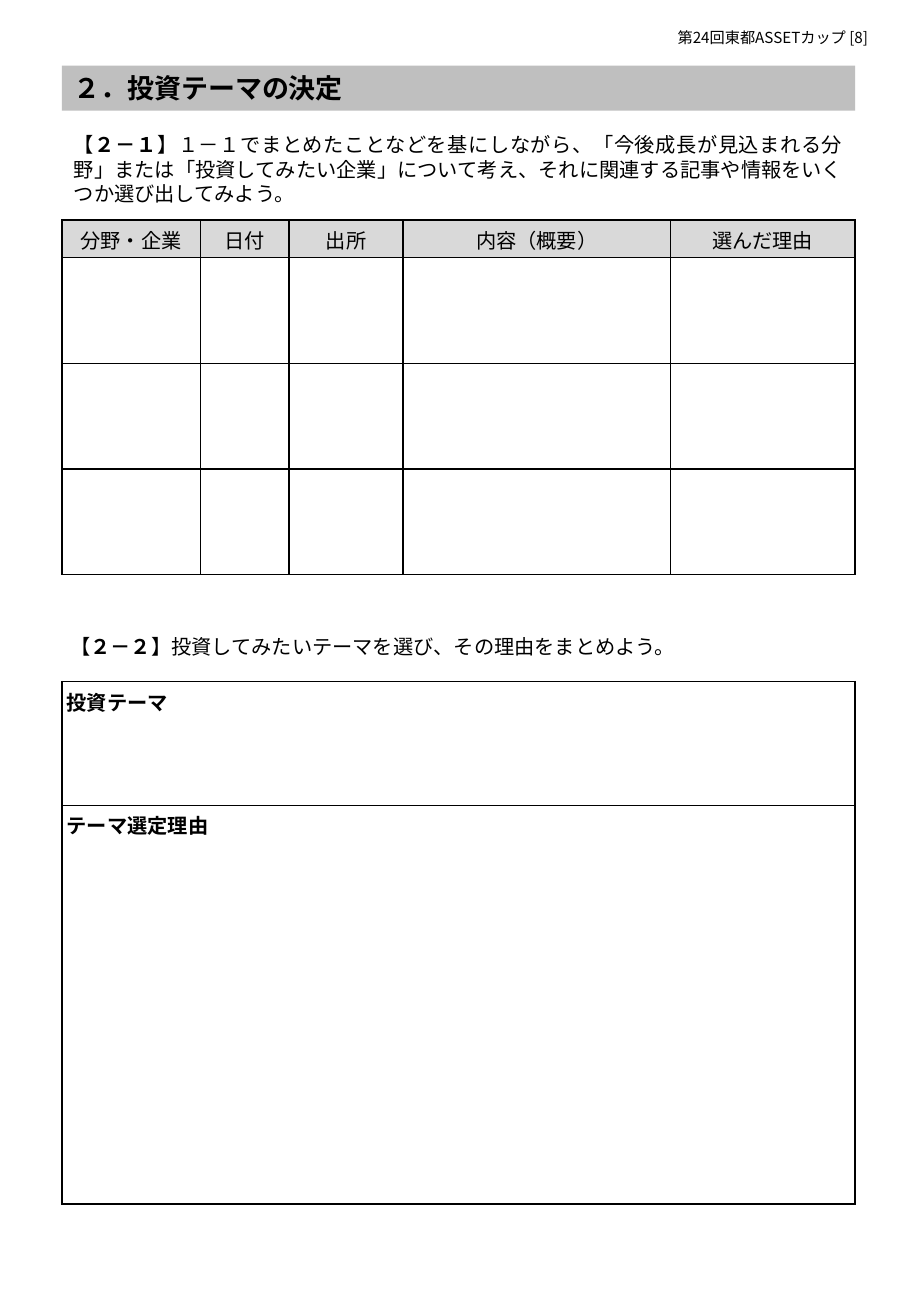
from pptx import Presentation
from pptx.dml.color import RGBColor
from pptx.enum.shapes import MSO_SHAPE as Shape
from pptx.enum.text import MSO_ANCHOR as Anchor, PP_ALIGN as Align
from pptx.oxml import parse_xml
from pptx.oxml.ns import nsdecls, qn
from pptx.util import Pt
from lxml.etree import SubElement

PX = 9144  # 100 px to the inch
FONT = "Noto Sans CJK JP"
COLORS = {"ink": "000000", "band": "BFBFBF", "header": "D9D9D9"}
LEFT, WIDTH = 51, 653
COLUMNS = {"分野・企業": 114, "日付": 73, "出所": 94, "内容（概要）": 220, "選んだ理由": 152}
ENTRY_ROWS = 3
THEME_ROWS = {"投資テーマ": 102, "テーマ選定理由": 328}


def emu(*lengths):
    return [length * PX for length in lengths]


def rgb(name):
    return RGBColor.from_string(COLORS[name])


def write(frame, *parts, size=12, bold=False, align=Align.LEFT, pitch=None):
    """Fill the frame with one paragraph; a part written as (text,) is bold."""
    paragraph = frame.paragraphs[0]
    paragraph.alignment = align
    if pitch:
        paragraph.line_spacing = Pt(pitch)
    for part in parts:
        emphasised = isinstance(part, tuple)
        run = paragraph.add_run()
        run.text = part[0] if emphasised else part
        run.font.size = Pt(size)
        run.font.bold = bold or emphasised
        run.font.color.rgb = rgb("ink")
        run.font.name = FONT
        properties = run._r.get_or_add_rPr()
        properties.set("lang", "ja-JP")
        SubElement(properties, qn("a:ea")).set("typeface", FONT)


def add_text(slide, box, *parts, **style):
    frame = slide.shapes.add_textbox(*emu(*box)).text_frame
    frame.word_wrap = True
    write(frame, *parts, **style)


def add_heading(slide, box, heading):
    band = slide.shapes.add_shape(Shape.RECTANGLE, *emu(*box))
    band.shadow.inherit = False
    band.fill.solid()
    band.fill.fore_color.rgb = rgb("band")
    band.line.fill.background()
    band.text_frame.vertical_anchor = Anchor.MIDDLE
    write(band.text_frame, heading, size=16, bold=True, pitch=19)


def add_borders(cell):
    properties = cell._tc.get_or_add_tcPr()
    for position, side in enumerate("LRTB"):
        properties.insert(position, parse_xml(
            f'<a:ln{side} {nsdecls("a")} w="12700"><a:solidFill>'
            f'<a:srgbClr val="{COLORS["ink"]}"/></a:solidFill></a:ln{side}>'))


def add_grid(slide, top, widths, heights):
    """Add a table of plain bordered cells at the left margin."""
    frame = slide.shapes.add_table(len(heights), len(widths),
                                   *emu(LEFT, top, sum(widths), sum(heights)))
    table = frame.table
    table.first_row = table.horz_banding = False
    for column, width in zip(table.columns, widths):
        column.width = width * PX
    for row, height in zip(table.rows, heights):
        row.height = height * PX
    for cell in table.iter_cells():
        cell.margin_left = cell.margin_right = 4 * PX
        cell.margin_top = cell.margin_bottom = 4 * PX
        cell.fill.background()
        add_borders(cell)
    return table


def add_article_table(slide):
    table = add_grid(slide, 181, list(COLUMNS.values()), [31] + [87] * ENTRY_ROWS)
    for cell, label in zip(table.rows[0].cells, COLUMNS):
        cell.fill.solid()
        cell.fill.fore_color.rgb = rgb("header")
        cell.vertical_anchor = Anchor.MIDDLE
        write(cell.text_frame, label, align=Align.CENTER)


def add_theme_table(slide):
    table = add_grid(slide, 561, [WIDTH], list(THEME_ROWS.values()))
    for cell, label in zip(table.iter_cells(), THEME_ROWS):
        write(cell.text_frame, label, bold=True)


def main():
    prs = Presentation()
    prs.slide_width, prs.slide_height = emu(750, 1083)
    slide = prs.slides.add_slide(prs.slide_layouts[6])

    add_text(slide, (548, 18, 202, 25), "第24回東都ASSETカップ [8]", size=9, pitch=11)
    add_heading(slide, (LEFT, 54, WIDTH, 37), "２．投資テーマの決定")
    question = {"align": Align.JUSTIFY, "pitch": 14.5}
    add_text(slide, (LEFT, 104, WIDTH, 70), "【", ("２－１",),
             "】１－１でまとめたことなどを基にしながら、「今後成長が見込まれる分野」または"
             "「投資してみたい企業」について考え、それに関連する記事や情報をいくつか選び出してみよう。",
             **question)
    add_article_table(slide)
    add_text(slide, (48, 517, WIDTH, 30), "【", ("２－２",),
             "】投資してみたいテーマを選び、その理由をまとめよう。", **question)
    add_theme_table(slide)
    prs.save("out.pptx")


if __name__ == "__main__":
    main()
